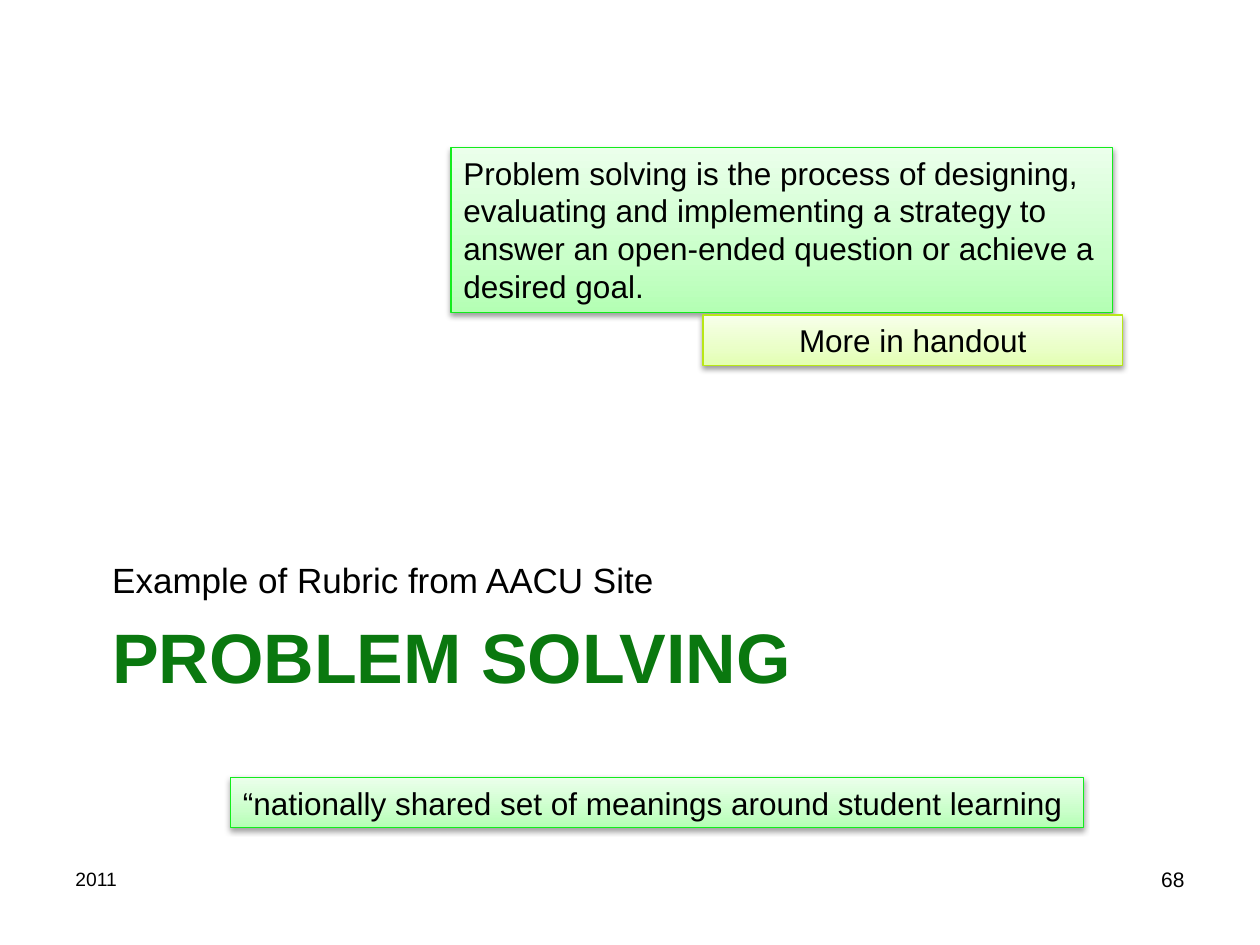
from copy import deepcopy

from lxml import etree
from pptx import Presentation
from pptx.dml.color import RGBColor
from pptx.enum.shapes import MSO_SHAPE as Shape
from pptx.enum.text import MSO_ANCHOR as Anchor, MSO_AUTO_SIZE as AutoSize, PP_ALIGN as Align
from pptx.oxml import parse_xml
from pptx.oxml.ns import nsdecls, qn
from pptx.util import Inches, Pt

BLACK = RGBColor(0x00, 0x00, 0x00)
TITLE_GREEN = RGBColor(0x0A, 0x78, 0x0F)
GREEN_LINE = RGBColor(0x12, 0xEC, 0x1C)
LIME_LINE = RGBColor(0xB8, 0xE7, 0x16)
GREEN_STOPS = [RGBColor(0xB4, 0xFF, 0xB4), RGBColor(0xCA, 0xFF, 0xCA), RGBColor(0xEB, 0xFF, 0xEB)]
LIME_STOPS = [RGBColor(0xE3, 0xFF, 0xB2), RGBColor(0xEA, 0xFF, 0xC8), RGBColor(0xF7, 0xFF, 0xEA)]
STOP_POSITIONS = [0, 0.35, 1]
SHADOW = (
    f'<a:outerShdw {nsdecls("a")} blurRad="40000" dist="20000" dir="5400000" rotWithShape="0">'
    '<a:srgbClr val="000000"><a:alpha val="38000"/></a:srgbClr></a:outerShdw>'
)


def place(box, left, top, width, height):
    box.left, box.top = Inches(left), Inches(top)
    box.width, box.height = Inches(width), Inches(height)


def write(box, text, size, align=Align.LEFT, anchor=Anchor.TOP, color=BLACK, bold=False):
    frame = box.text_frame
    frame.word_wrap = True
    frame.vertical_anchor = anchor
    para = frame.paragraphs[0]
    para.alignment = align
    para.space_before = Pt(0)
    span = para.add_run()
    span.text = text
    span.font.name = "Arial"
    span.font.size = Pt(size)
    span.font.bold = bold
    span.font.color.rgb = color


deck = Presentation()
deck.slide_width, deck.slide_height = Inches(10), Inches(7.5)
page = deck.slides.add_slide(deck.slide_layouts[2])

# Title and subtitle
title, subtitle = page.placeholders
place(title, 0.79, 4.82, 8.5, 1.49)
write(title, "PROBLEM SOLVING", 40, color=TITLE_GREEN, bold=True)
place(subtitle, 0.79, 3.18, 8.5, 1.64)
write(subtitle, "Example of Rubric from AACU Site", 20, anchor=Anchor.BOTTOM)

# Gradient callouts
definition = (
    "Problem solving is the process of designing, evaluating and implementing "
    "a strategy to answer an open-ended question or achieve a desired goal."
)
quote = "“nationally shared set of meanings around student learning"
callouts = [
    (definition, (3.58, 1.17, 5.25, 1.31), GREEN_STOPS, GREEN_LINE, Align.LEFT, True),
    ("More in handout", (5.58, 2.5, 3.33, 0.4), LIME_STOPS, LIME_LINE, Align.CENTER, True),
    (quote, (1.83, 6.17, 6.77, 0.4), GREEN_STOPS, GREEN_LINE, Align.LEFT, False),
]
for text, area, colors, line_color, align, wrap in callouts:
    box = page.shapes.add_shape(Shape.RECTANGLE, *map(Inches, area))
    write(box, text, 18, align)
    box.text_frame.word_wrap = wrap
    box.text_frame.auto_size = AutoSize.SHAPE_TO_FIT_TEXT
    box.line.color.rgb = line_color
    box.line.width = Pt(0.75)

    # Three stops, darkest at the bottom
    box.fill.gradient()
    box.fill.gradient_angle = 90
    stop_list = next(box._element.iter(qn("a:gsLst")))
    stop_list.append(deepcopy(stop_list[0]))
    for stop, position, color in zip(box.fill.gradient_stops, STOP_POSITIONS, colors):
        stop.position = position
        stop.color.rgb = color

    box.shadow.inherit = False
    next(box._element.iter(qn("a:effectLst"))).append(parse_xml(SHADOW))

# Date and page number
footers = [("2011", 0.5, 0.58, 11, Align.LEFT), ("68", 9, 0.5, 12, Align.RIGHT)]
for text, left, width, size, align in footers:
    box = page.shapes.add_textbox(Inches(left), Inches(6.83), Inches(width), Inches(0.52))
    write(box, text, size, align)

deck.save("out.pptx")
